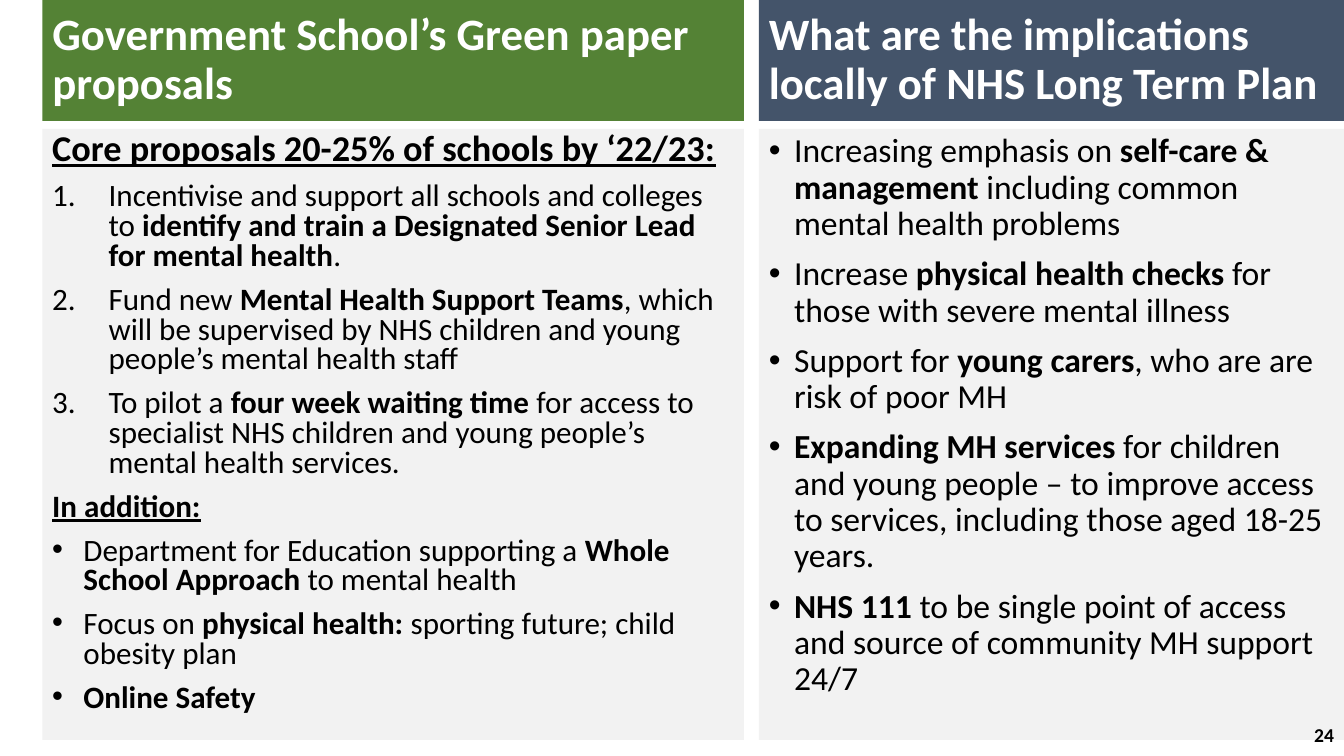
from dataclasses import dataclass

from lxml.etree import SubElement
from pptx import Presentation
from pptx.dml.color import RGBColor
from pptx.enum.shapes import MSO_SHAPE as Shape
from pptx.enum.text import MSO_ANCHOR as Anchor, MSO_AUTO_SIZE as AutoSize, PP_ALIGN as Align
from pptx.oxml.ns import qn
from pptx.util import Pt


@dataclass(frozen=True)
class Theme:
    font: str = "Calibri"
    green: str = "548235"
    slate: str = "44546A"
    panel: str = "F2F2F2"
    white: str = "FFFFFF"
    black: str = "000000"
    heading: float = 32
    lead: float = 25.9
    proposal: float = 22.2
    implication: float = 24
    number: float = 14


@dataclass(frozen=True)
class Box:
    left: float
    top: float
    width: float
    height: float


THEME = Theme()
PAGE = Box(0, 0, 960, 540)
HEADER_HEIGHT = 86.4
BODY_TOP = 92.16
BODY_HEIGHT = 436.32
NUMBERED = ("buAutoNum", {"type": "arabicPeriod"}, 40.32)
BULLET = ("buChar", {"char": "•"}, 22.32)
WIDE_BULLET = ("buChar", {"char": "•"}, 18)

PROPOSALS = [
    ("**Core proposals 20-25% of schools by ‘22/23:**", None),
    ("Incentivise and support all schools and colleges to **identify and train a "
     "Designated Senior Lead for mental health**.", NUMBERED),
    ("Fund new **Mental Health Support Teams**, which will be supervised by NHS "
     "children and young people’s mental health staff", NUMBERED),
    ("To pilot a **four week waiting time **for access to specialist NHS children "
     "and young people’s mental health services.", NUMBERED),
    ("**In addition:**", None),
    ("Department for Education supporting a **Whole School Approach **to mental health", BULLET),
    ("Focus on **physical health: **sporting future; child obesity plan", BULLET),
    ("**Online Safety**", BULLET),
]
IMPLICATIONS = [
    "Increasing emphasis on **self-care & management** including common mental health problems",
    "Increase **physical health checks **for those with severe mental illness",
    "Support for **young carers**, who are are risk of poor MH",
    "**Expanding MH services **for children and young people – to improve access to "
    "services, including those aged 18-25 years.",
    "**NHS 111 **to be single point of access and source of community MH support 24/7",
]


def apply(target, values):
    for name, value in values.items():
        setattr(target, name, value)


def place(shape, box):
    apply(shape, {name: Pt(getattr(box, name)) for name in ("left", "top", "width", "height")})


def set_frame(shape, anchor):
    apply(shape.text_frame, {
        "word_wrap": True, "auto_size": AutoSize.NONE, "vertical_anchor": anchor,
        "margin_left": Pt(7.2), "margin_right": Pt(7.2),
        "margin_top": Pt(3.6), "margin_bottom": Pt(3.6),
    })


def paint(shape, color):
    shape.fill.solid()
    shape.fill.fore_color.rgb = RGBColor.from_string(color)
    shape.line.fill.background()


def add_panel(page, box, color):
    panel = page.shapes.add_shape(Shape.RECTANGLE, 0, 0, 0, 0)
    place(panel, box)
    panel.shadow.inherit = False
    paint(panel, color)
    return panel


def write(para, text, size, color=THEME.black, underline=False):
    for index, part in enumerate(text.split("**")):
        if part:
            run = para.add_run()
            run.text = part
            apply(run.font, {"name": THEME.font, "size": Pt(size),
                             "bold": index % 2 == 1, "underline": underline})
            run.font.color.rgb = RGBColor.from_string(color)


def mark(para, marker):
    tag, attributes, indent = marker
    properties = para._p.get_or_add_pPr()
    properties.set("marL", str(Pt(indent)))
    properties.set("indent", str(-Pt(indent)))
    SubElement(properties, qn("a:buFont"), typeface="Arial")
    SubElement(properties, qn(f"a:{tag}"), attributes)


def format_header(shape, box, text, color):
    place(shape, box)
    paint(shape, color)
    set_frame(shape, Anchor.MIDDLE)
    para = shape.text_frame.paragraphs[0]
    apply(para, {"alignment": Align.LEFT, "line_spacing": 0.9, "space_before": Pt(0)})
    write(para, f"**{text}**", THEME.heading, THEME.white)


def add_list(page, box, entries, spacing):
    frame_shape = add_panel(page, box, THEME.panel)
    set_frame(frame_shape, Anchor.TOP)
    frame = frame_shape.text_frame
    for index, (text, size, marker) in enumerate(entries):
        para = frame.add_paragraph() if index else frame.paragraphs[0]
        apply(para, {"alignment": Align.LEFT, "line_spacing": spacing, "space_before": Pt(10)})
        if marker:
            mark(para, marker)
        write(para, text, size, underline=marker is None)


def add_column(page, header, box, heading, color, entries, spacing):
    format_header(header, Box(box.left, box.top, box.width, HEADER_HEIGHT), heading, color)
    body = Box(box.left, box.top + BODY_TOP, box.width, BODY_HEIGHT)
    add_list(page, body, entries, spacing)


def add_page_number(page, box, number):
    label = page.shapes.add_textbox(0, 0, 0, 0)
    place(label, box)
    set_frame(label, Anchor.MIDDLE)
    para = label.text_frame.paragraphs[0]
    para.alignment = Align.RIGHT
    write(para, f"**{number}**", THEME.number)


def build_page(deck):
    page = deck.slides.add_slide(deck.slide_layouts[5])
    left = Box(30.24, 0, 501.12, PAGE.height)
    right = Box(542.16, 0, PAGE.width - 542.16, PAGE.height)
    proposals = [(text, THEME.proposal if index else THEME.lead, marker)
                 for index, (text, marker) in enumerate(PROPOSALS)]
    implications = [(text, THEME.implication, WIDE_BULLET) for text in IMPLICATIONS]
    add_column(page, page.shapes.title, left, "Government School’s Green paper proposals",
               THEME.green, proposals, 0.8)
    right_header = add_panel(page, right, THEME.slate)
    add_column(page, right_header, right,
               "What are the implications locally of NHS Long Term Plan",
               THEME.slate, implications, 0.9)
    add_page_number(page, Box(PAGE.width - 216, 510.48, 216, 28.8), 24)


def main():
    deck = Presentation()
    apply(deck, {"slide_width": Pt(PAGE.width), "slide_height": Pt(PAGE.height)})
    build_page(deck)
    deck.save("out.pptx")


if __name__ == "__main__":
    main()
